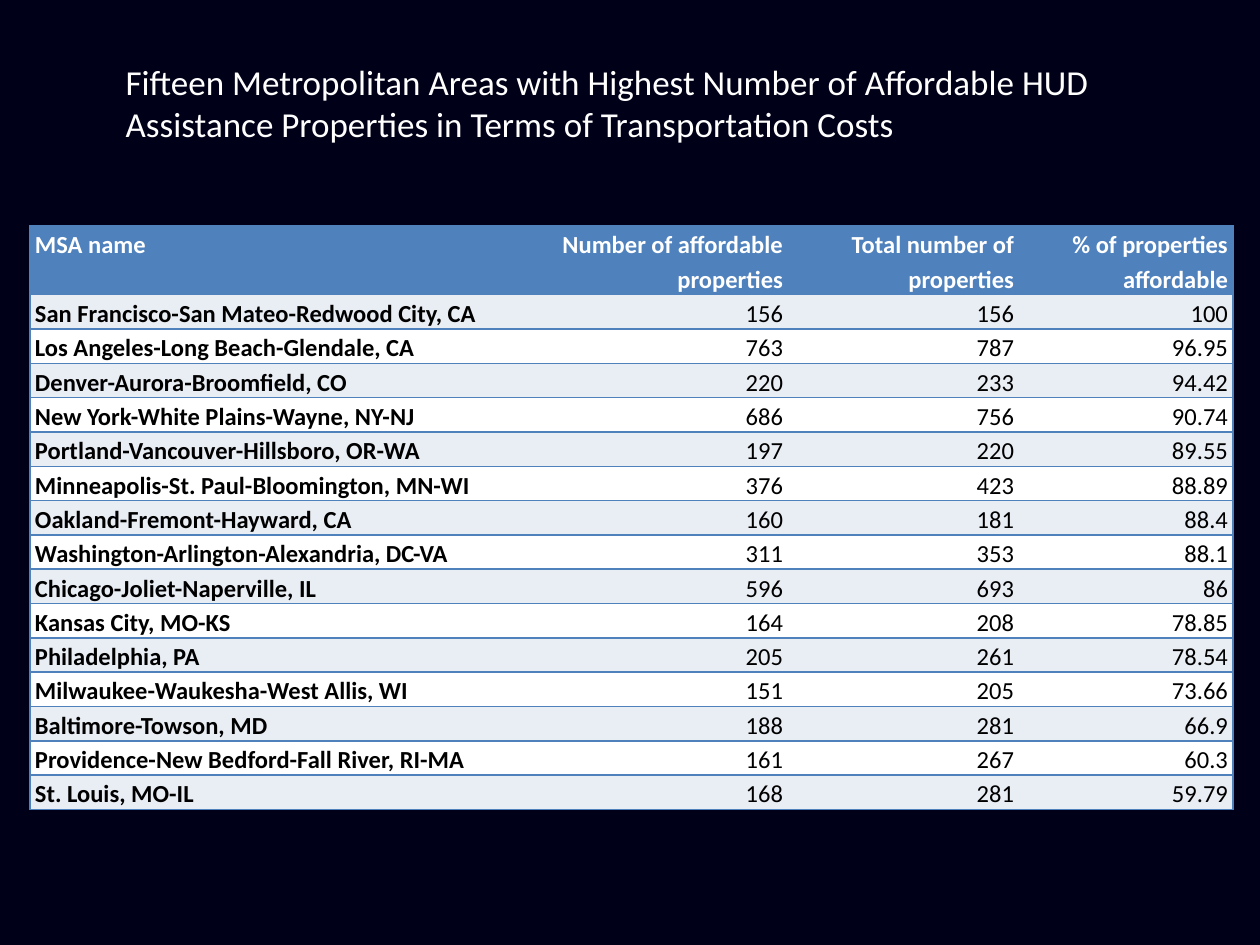
"""Build a slide with a table of the metropolitan areas with most affordable HUD properties."""
from lxml.etree import SubElement
from pptx import Presentation
from pptx.dml.color import RGBColor
from pptx.enum.text import MSO_ANCHOR as Anchor, PP_ALIGN as Align
from pptx.oxml.ns import qn
from pptx.util import Emu, Pt

NAVY = RGBColor(0x00, 0x00, 0x18)
BLUE = RGBColor(0x4F, 0x81, 0xBD)
PALE = RGBColor(0xE9, 0xED, 0xF4)
WHITE = RGBColor(0xFF, 0xFF, 0xFF)
BLACK = RGBColor(0x00, 0x00, 0x00)
NO_STYLE = "{2D5ABB26-0587-4C30-8999-92F81FD0307C}"

TITLE = ("Fifteen Metropolitan Areas with Highest Number of Affordable HUD "
         "Assistance Properties in Terms of Transportation Costs")
ROWS = [
    ("MSA name", "Number of affordable properties",
     "Total number of properties", "% of properties affordable"),
    ("San Francisco-San Mateo-Redwood City, CA", "156", "156", "100"),
    ("Los Angeles-Long Beach-Glendale, CA", "763", "787", "96.95"),
    ("Denver-Aurora-Broomfield, CO", "220", "233", "94.42"),
    ("New York-White Plains-Wayne, NY-NJ", "686", "756", "90.74"),
    ("Portland-Vancouver-Hillsboro, OR-WA", "197", "220", "89.55"),
    ("Minneapolis-St. Paul-Bloomington, MN-WI", "376", "423", "88.89"),
    ("Oakland-Fremont-Hayward, CA", "160", "181", "88.4"),
    ("Washington-Arlington-Alexandria, DC-VA", "311", "353", "88.1"),
    ("Chicago-Joliet-Naperville, IL", "596", "693", "86"),
    ("Kansas City, MO-KS", "164", "208", "78.85"),
    ("Philadelphia, PA", "205", "261", "78.54"),
    ("Milwaukee-Waukesha-West Allis, WI", "151", "205", "73.66"),
    ("Baltimore-Towson, MD", "188", "281", "66.9"),
    ("Providence-New Bedford-Fall River, RI-MA", "161", "267", "60.3"),
    ("St. Louis, MO-IL", "168", "281", "59.79"),
]
COLUMN_WIDTHS = [517, 241, 231, 214]
ROW_HEIGHT = 34


def px(length):
    return Emu(round(length * 914400 / 126))


def apply_format(target, values):
    for name, value in values.items():
        setattr(target, name, value)


deck = Presentation()
apply_format(deck, {"slide_width": px(1260), "slide_height": px(945)})
page = deck.slides.add_slide(deck.slide_layouts[5])
page.background.fill.solid()
page.background.fill.fore_color.rgb = NAVY

title = page.shapes.title
apply_format(title, {"left": px(113), "top": px(54), "width": px(1046), "height": px(97)})
apply_format(title.text_frame, {"text": TITLE, "word_wrap": True, "vertical_anchor": Anchor.TOP})
para = title.text_frame.paragraphs[0]
para.alignment = Align.LEFT
apply_format(para.font, {"name": "Calibri", "size": Pt(20)})
para.font.color.rgb = WHITE

heights = [2 * ROW_HEIGHT] + [ROW_HEIGHT] * (len(ROWS) - 1)
table = page.shapes.add_table(
    len(ROWS), len(COLUMN_WIDTHS), px(30), px(226),
    px(sum(COLUMN_WIDTHS)), px(sum(heights))).table
table._tbl.tblPr.find(qn("a:tableStyleId")).text = NO_STYLE
for column, width in zip(table.columns, COLUMN_WIDTHS):
    column.width = px(width)

last = len(COLUMN_WIDTHS) - 1
for r, values in enumerate(ROWS):
    table.rows[r].height = px(heights[r])
    for c, value in enumerate(values):
        cell = table.cell(r, c)
        apply_format(cell, {"text": value, "margin_left": px(5), "margin_right": px(5),
                            "margin_top": 0, "margin_bottom": 0})
        para = cell.text_frame.paragraphs[0]
        apply_format(para, {"alignment": Align.RIGHT if c else Align.LEFT, "line_spacing": 1.15})
        apply_format(para.font, {"name": "Calibri", "size": Pt(14), "bold": r == 0 or c == 0})
        para.font.color.rgb = BLACK if r else WHITE

        sides = ["lnL"] * (c == 0) + ["lnR"] * (c == last) + ["lnT", "lnB"]
        for side in sides:
            border = SubElement(cell._tc.get_or_add_tcPr(), qn(f"a:{side}"), w=str(Pt(1)))
            paint = SubElement(border, qn("a:solidFill"))
            SubElement(paint, qn("a:srgbClr"), val=str(BLUE))
        cell.fill.solid()
        cell.fill.fore_color.rgb = BLUE if r == 0 else PALE if r % 2 else WHITE

deck.save("out.pptx")
